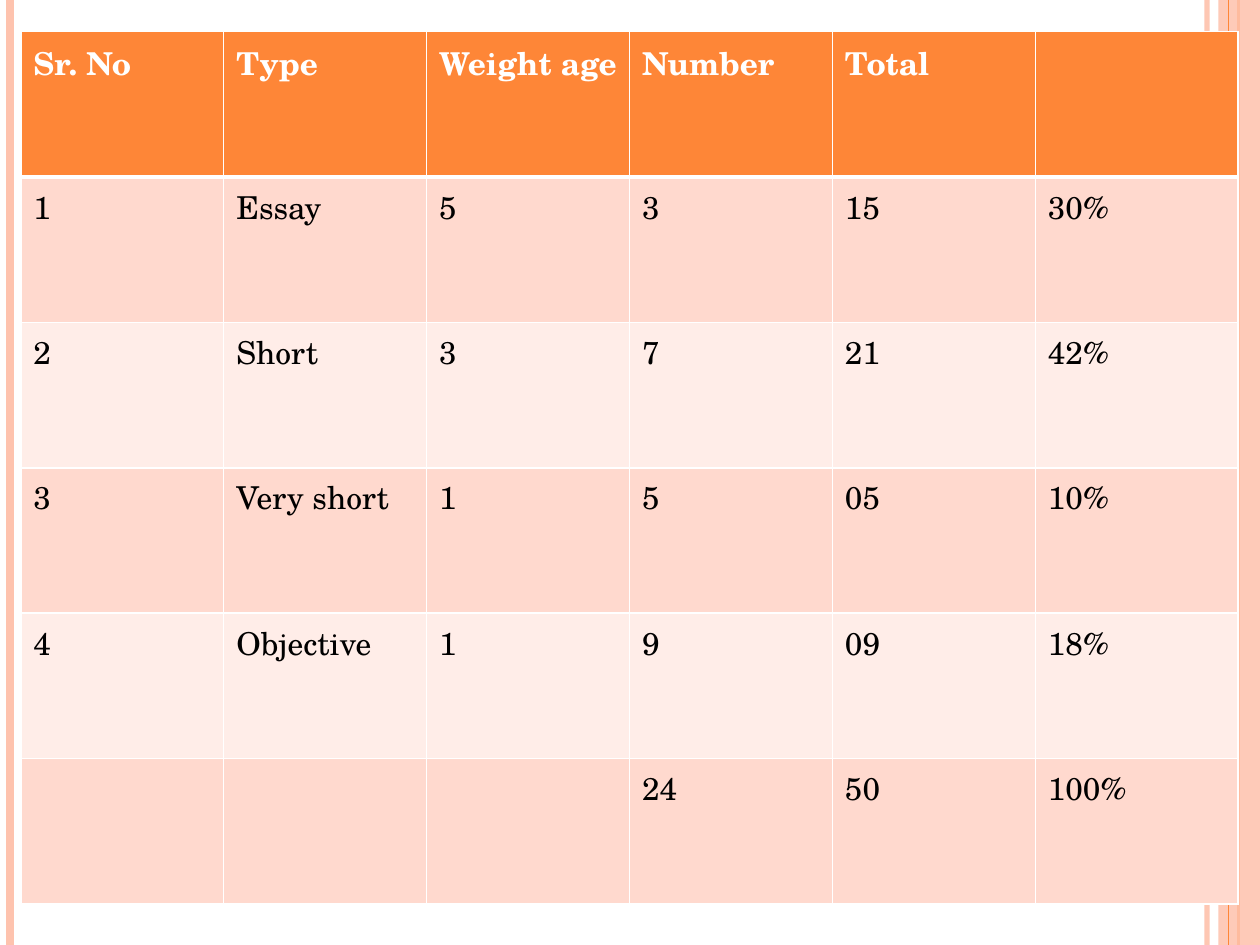
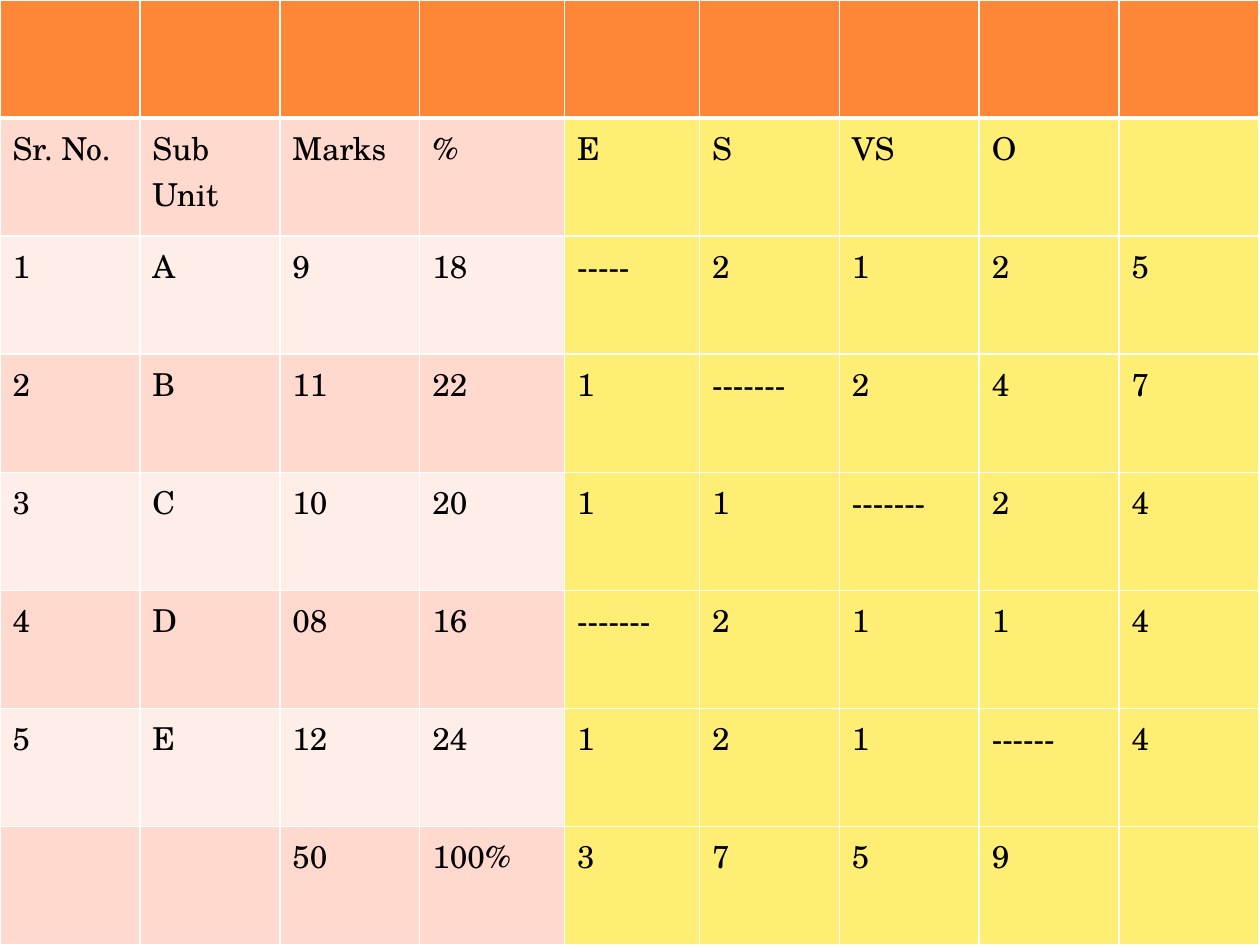
"""Build two slides with a question-type table and a blueprint table."""
from lxml import etree
from pptx import Presentation
from pptx import util as u
from pptx.dml.color import RGBColor
from pptx.enum import shapes
from pptx.oxml import ns

ORANGE = RGBColor(0xFE, 0x86, 0x37)
PEACH = RGBColor(0xFE, 0xC3, 0xAE)
BAND_DARK = RGBColor(0xFF, 0xD9, 0xCE)
BAND_LIGHT = RGBColor(0xFF, 0xED, 0xE8)
YELLOW = RGBColor(0xFF, 0xEE, 0x74)
WHITE = RGBColor(0xFF, 0xFF, 0xFF)
BLACK = RGBColor(0, 0, 0)
FONT = "TeX Gyre Schola"
WIDTH, HEIGHT = u.Cm(25.4), u.Cm(19.05)

STRIPES = [(24.33, PEACH, 3, 93), (0.2, PEACH, 4.5, 100),
           (24.97, ORANGE, 1.5, 100), (24.77, ORANGE, 0.75, 100)]

QUESTION_TYPES = [
    ["Sr. No", "Type", "Weight age", "Number", "Total", ""],
    ["1", "Essay", "5", "3", "15", "30%"],
    ["2", "Short", "3", "7", "21", "42%"],
    ["3", "Very short", "1", "5", "05", "10%"],
    ["4", "Objective", "1", "9", "09", "18%"],
    ["", "", "", "24", "50", "100%"],
]
BLUEPRINT = [
    [""] * 9,
    ["Sr. No.", "Sub Unit", "Marks", "%", "E", "S", "VS", "O", ""],
    ["1", "A", "9", "18", "-----", "2", "1", "2", "5"],
    ["2", "B", "11", "22", "1", "-------", "2", "4", "7"],
    ["3", "C", "10", "20", "1", "1", "-------", "2", "4"],
    ["4", "D", "08", "16", "-------", "2", "1", "1", "4"],
    ["5", "E", "12", "24", "1", "2", "1", "------", "4"],
    ["", "", "50", "100%", "3", "7", "5", "9", ""],
]
TABLES = [
    (QUESTION_TYPES, 0.42, 0.64, [4.09] * 6, 2.93, 6),
    (BLUEPRINT, 0, 0, [2.82] * 3 + [2.92, 2.72] + [2.82] * 4, 2.38, 4),
]


def set_alpha(sp, percent):
    for color in sp._element.spPr.iter(ns.qn("a:srgbClr")):
        etree.SubElement(color, ns.qn("a:alpha"), val=str(percent * 1000))


def set_border(cell, side, points):
    ln = etree.SubElement(cell._tc.get_or_add_tcPr(), ns.qn("a:ln" + side),
                          w=str(u.Pt(points)))
    fill = etree.SubElement(ln, ns.qn("a:solidFill"))
    etree.SubElement(fill, ns.qn("a:srgbClr"), val=str(WHITE))


prs = Presentation()
prs.slide_width, prs.slide_height = WIDTH, HEIGHT

for rows, left, top, widths, row_height, yellow_from in TABLES:
    s = prs.slides.add_slide(prs.slide_layouts[6])

    for x, color, weight, opacity in STRIPES:
        line = s.shapes.add_connector(shapes.MSO_CONNECTOR.STRAIGHT,
                                      u.Cm(x), 0, u.Cm(x), HEIGHT)
        line.line.color.rgb = color
        line.line.width = u.Pt(weight)
        set_alpha(line, opacity)
        etree.SubElement(line._element.spPr, ns.qn("a:effectLst"))
        if color == ORANGE and weight == 1.5:
            sp = s.shapes.add_shape(shapes.MSO_SHAPE.RECTANGLE, u.Cm(24.56), 0,
                                    u.Cm(0.84), HEIGHT)
            sp.shadow.inherit = False
            sp.fill.solid()
            sp.fill.fore_color.rgb = PEACH
            sp.line.fill.background()
            set_alpha(sp, 87)

    table = s.shapes.add_table(len(rows), len(widths), u.Cm(left), u.Cm(top),
                               u.Cm(sum(widths)),
                               u.Cm(row_height * len(rows))).table
    for column, width in zip(table.columns, widths):
        column.width = u.Cm(width)
    for i, values in enumerate(rows):
        table.rows[i].height = u.Cm(row_height)
        for j, value in enumerate(values):
            cell = table.cell(i, j)
            for side in "LRTB":
                under_header = (i, side) in [(0, "B"), (1, "T")]
                set_border(cell, side, 3 if under_header else 1)
            cell.fill.solid()
            if i == 0:
                cell.fill.fore_color.rgb = ORANGE
            elif j >= yellow_from:
                cell.fill.fore_color.rgb = YELLOW
            else:
                cell.fill.fore_color.rgb = BAND_DARK if i % 2 else BAND_LIGHT
            p = cell.text_frame.paragraphs[0]
            p.text = value
            for r in p.runs:
                r.font.name = FONT
                r.font.size = u.Pt(18)
                r.font.bold = i == 0
                r.font.color.rgb = BLACK if i else WHITE

prs.save("out.pptx")
